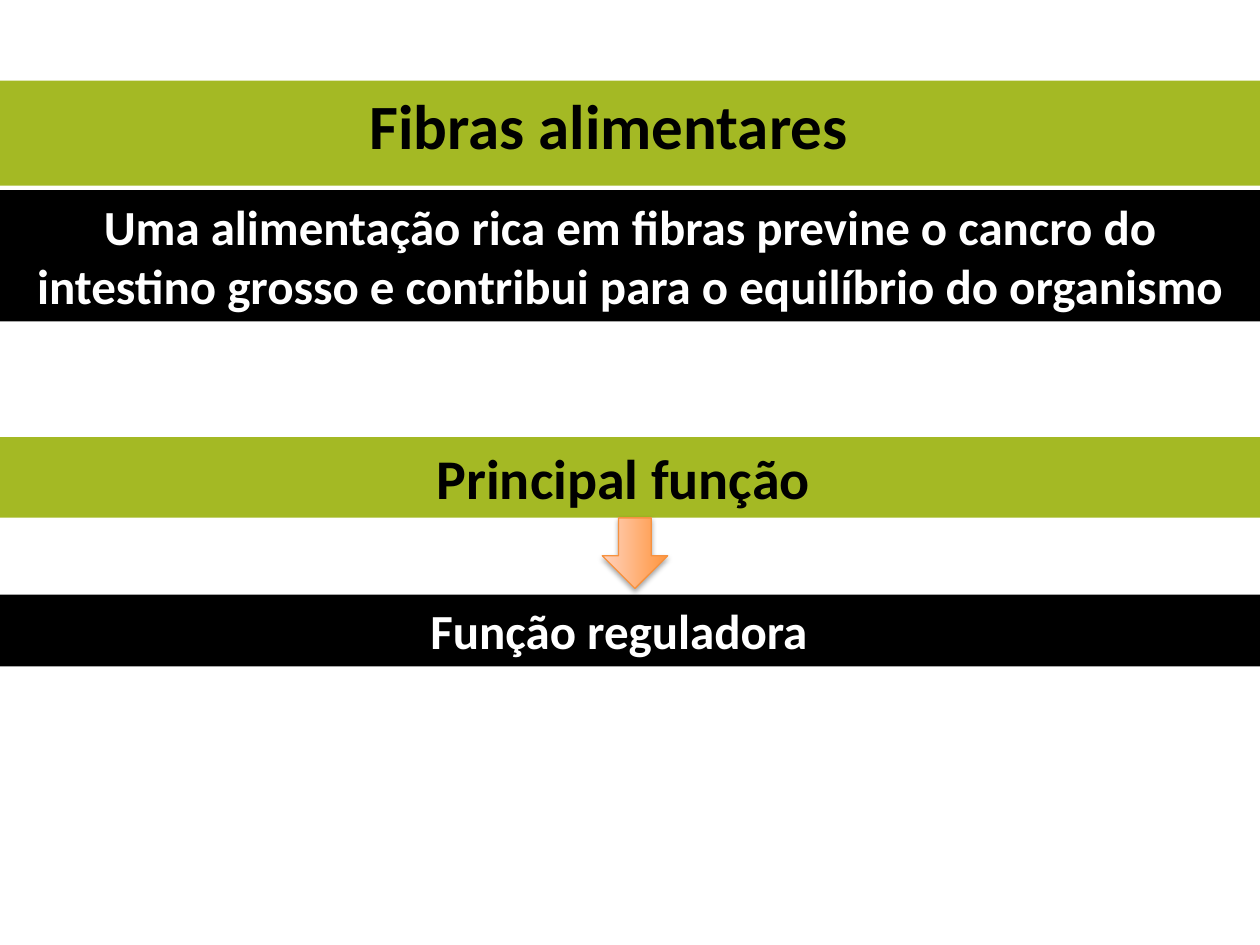
"""Build a slide on dietary fibre and its main function."""
import pptx
import pptx.dml.color
import pptx.enum.shapes
import pptx.enum.text
import pptx.oxml
import pptx.oxml.ns
import pptx.util

Pt = pptx.util.Pt
RGBColor = pptx.dml.color.RGBColor
GREEN = RGBColor(0xA4, 0xB9, 0x24)
BLACK = RGBColor(0, 0, 0)
WHITE = RGBColor(0xFF, 0xFF, 0xFF)
ORANGE = RGBColor(0xFF, 0x95, 0x3E)
PEACH = RGBColor(0xFF, 0xD2, 0xBD)
OUTLINE = RGBColor(0xF6, 0x92, 0x40)
WIDTH, HEIGHT = 720, 540
SHADOW = (
    f'<a:outerShdw {pptx.oxml.ns.nsdecls("a")} blurRad="{Pt(3.1)}" dist="{Pt(1.8)}" '
    'dir="5400000" rotWithShape="0"><a:srgbClr val="000000">'
    '<a:alpha val="35000"/></a:srgbClr></a:outerShdw>'
)


def apply_format(target, values):
    """Set each attribute of the target from a dict."""
    for name, value in values.items():
        setattr(target, name, value)


class SlideBuilder:
    """Hold the text style and the current slide."""

    font = {"name": "Calibri", "bold": True}
    frame = {
        "word_wrap": True,
        "auto_size": pptx.enum.text.MSO_AUTO_SIZE.SHAPE_TO_FIT_TEXT,
        "vertical_anchor": pptx.enum.text.MSO_ANCHOR.TOP,
        "margin_left": Pt(7.2),
        "margin_top": Pt(3.6),
        "margin_bottom": Pt(3.6),
    }

    def __init__(self, slide):
        """Keep the slide to draw on."""
        self.slide = slide

    def format_band(self, shape, text, top, height, size, fill, color, shift=0):
        """Place a full-width band and write its centred text, moved left by shift."""
        apply_format(shape, {"left": 0, "top": Pt(top), "width": Pt(WIDTH), "height": Pt(height)})
        shape.fill.solid()
        shape.fill.fore_color.rgb = fill
        shape.line.fill.background()
        text_frame = shape.text_frame
        text_frame.text = text
        apply_format(text_frame, {**self.frame, "margin_right": Pt(7.2 + 2 * shift)})
        paragraph = text_frame.paragraphs[0]
        paragraph.alignment = pptx.enum.text.PP_ALIGN.CENTER
        run_font = paragraph.runs[0].font
        apply_format(run_font, {**self.font, "size": Pt(size)})
        run_font.color.rgb = color

    def title(self, *band):
        """Format the title placeholder as a band."""
        self.format_band(self.slide.shapes.title, *band)

    def band(self, *band):
        """Add a text box formatted as a band."""
        self.format_band(self.slide.shapes.add_textbox(0, 0, 0, 0), *band)

    def down_arrow(self, left, top, width, height):
        """Add a left arrow turned to point down, with gradient and shadow."""
        arrow = self.slide.shapes.add_shape(
            pptx.enum.shapes.MSO_SHAPE.LEFT_ARROW, Pt(left), Pt(top), Pt(width), Pt(height)
        )
        arrow.rotation = 270
        arrow.fill.gradient()
        arrow.fill.gradient_angle = 90
        for stop, color, position in zip(arrow.fill.gradient_stops, (ORANGE, PEACH), (0, 1)):
            stop.color.rgb = color
            stop.position = position
        arrow.line.color.rgb = OUTLINE
        arrow.line.width = Pt(0.75)
        arrow.shadow.inherit = False
        effects = arrow._element.spPr.find(pptx.oxml.ns.qn("a:effectLst"))
        effects.append(pptx.oxml.parse_xml(SHADOW))


def main():
    """Build and save the presentation."""
    presentation = pptx.Presentation()
    apply_format(presentation, {"slide_width": Pt(WIDTH), "slide_height": Pt(HEIGHT)})
    builder = SlideBuilder(presentation.slides.add_slide(presentation.slide_layouts[5]))
    builder.title("Fibras alimentares", 46, 51, 36, GREEN, BLACK, 12.2)
    builder.band(
        "Uma alimentação rica em fibras previne o cancro do intestino grosso "
        "e contribui para o equilíbrio do organismo",
        108.7, 75, 28, BLACK, WHITE,
    )
    builder.band("Principal função", 249.8, 46, 32, GREEN, BLACK, 3.6)
    builder.down_arrow(342.7, 297.4, 40.3, 37.4)
    builder.band("Função reguladora", 339.8, 41, 28, BLACK, WHITE, 6.3)
    presentation.save("out.pptx")


if __name__ == "__main__":
    main()
